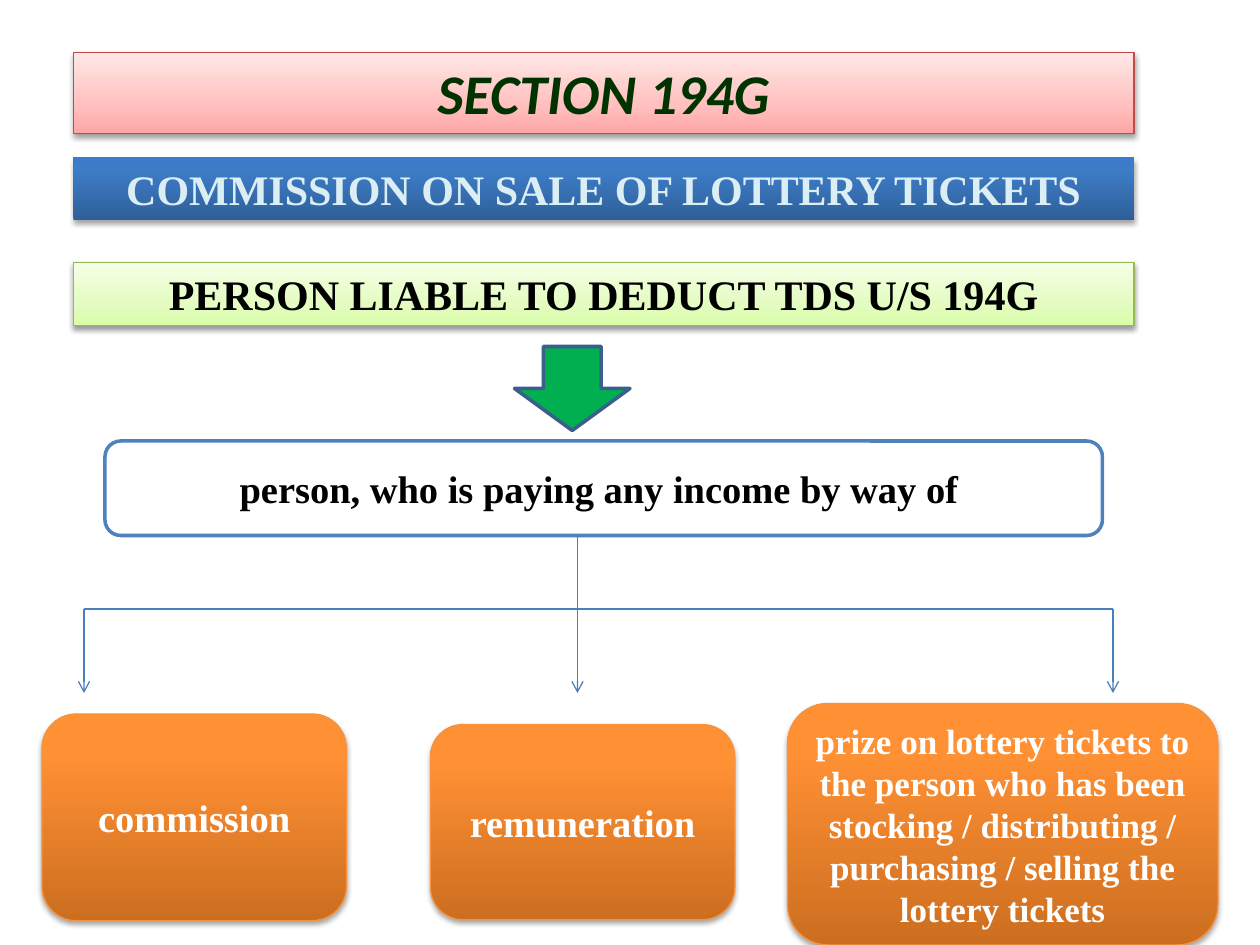
from lxml import etree
from pptx import Presentation
from pptx import util as u
from pptx.dml.color import RGBColor
from pptx.enum import shapes, text
from pptx.oxml.ns import qn

COLORS = {
    "white": "FFFFFF", "black": "000000", "dark green": "003300",
    "pale blue": "DBEEF4", "green": "00B050", "arrow edge": "3A5F8C",
    "blue": "4F81BD", "connector": "4B7EBC", "red edge": "BF4C48",
    "lime edge": "98B955", "orange edge": "F69240",
}
# Gradient stops run from bottom to top: (percent, colour)
GRADIENTS = {
    "red": [(0, "FFA6A5"), (35, "FFC0BF"), (100, "FFE7E7")],
    "blue": [(0, "2F5F99"), (80, "3D7CC7"), (100, "3A7CCB")],
    "lime": [(0, "DAFDA7"), (35, "E4FCC2"), (100, "F5FFE7")],
    "orange": [(0, "CC6E20"), (80, "FF9034"), (100, "FF9136")],
}
SOFT_SHADOW, DEEP_SHADOW = (38, 1.6), (35, 1.8)  # opacity %, distance pt
SERIF = "Times New Roman"

# All places are in grid units: the slide is 120 columns by 90 rows
COLUMNS, ROWS = 120, 90
BANNER_LEFT, BANNER_WIDTH = 7, 101
TITLE = "SECTION 194G"
BANNERS = [  # wording, top, gradient, edge, shadow, text colour
    ("COMMISSION ON SALE OF LOTTERY TICKETS", 15, "blue", None, DEEP_SHADOW, "pale blue"),
    ("PERSON LIABLE TO DEDUCT TDS U/S 194G", 25, "lime", "lime edge", SOFT_SHADOW, "black"),
]
PAYER = "person, who is paying any income by way of "
INCOMES = [  # wording, place, text size
    ("commission", (4, 68, 29, 19.7), 22),
    ("remuneration", (41, 69, 29, 18.6), 22),
    ("prize on lottery tickets to the person who has been stocking / "
     "distributing / purchasing / selling the lottery tickets", (75, 67, 41, 23), 20),
]
BRANCH_COLUMNS = (8, 55, 106)
PAYER_BOTTOM, BRANCH_ROW, BRANCH_END = 51, 58, 66

presentation = Presentation()
presentation.slide_width, presentation.slide_height = u.Inches(10), u.Inches(7.5)
slide = presentation.slides.add_slide(presentation.slide_layouts[5])


def across(columns):
    return round(presentation.slide_width * columns / COLUMNS)


def down(rows):
    return round(presentation.slide_height * rows / ROWS)


def rgb(name):
    return RGBColor.from_string(COLORS[name])


def place(shape, left, top, width, height):
    shape.left, shape.top = across(left), down(top)
    shape.width, shape.height = across(width), down(height)


def add_shape(kind, box):
    shape = slide.shapes.add_shape(kind, 0, 0, 0, 0)
    place(shape, *box)
    shape.shadow.inherit = False
    return shape


def set_edge(shape, color, width=0.75):
    if color is None:
        shape.line.fill.background()
    else:
        shape.line.color.rgb = rgb(color)
        shape.line.width = u.Pt(width)


def add_color(parent, value):
    return etree.SubElement(parent, qn("a:srgbClr"), val=value)


def set_gradient(shape, name):
    shape.fill.gradient()
    shape.fill.gradient_angle = 90
    stops = shape._element.spPr.find(qn("a:gradFill")).find(qn("a:gsLst"))
    for stop in list(stops):
        stops.remove(stop)
    for percent, value in GRADIENTS[name]:
        add_color(etree.SubElement(stops, qn("a:gs"), pos=str(percent * 1000)), value)


def set_shadow(shape, opacity, distance):
    shape.shadow.inherit = False
    effects = shape._element.spPr.find(qn("a:effectLst"))
    shadow = etree.SubElement(
        effects, qn("a:outerShdw"), blurRad=str(u.Pt(3.1)), dist=str(u.Pt(distance)),
        dir="5400000", rotWithShape="0")
    etree.SubElement(add_color(shadow, COLORS["black"]), qn("a:alpha"), val=str(opacity * 1000))


def write(shape, wording, size, color, font=SERIF, italic=False,
          anchor=text.MSO_ANCHOR.MIDDLE):
    frame = shape.text_frame
    frame.text = wording
    frame.word_wrap = True
    frame.auto_size = text.MSO_AUTO_SIZE.NONE
    frame.vertical_anchor = anchor
    paragraph = frame.paragraphs[0]
    paragraph.alignment = text.PP_ALIGN.CENTER
    style = paragraph.runs[0].font
    style.name, style.size = font, u.Pt(size)
    style.bold, style.italic = True, italic
    style.color.rgb = rgb(color)


def finish(shape, gradient, edge, shadow):
    set_gradient(shape, gradient)
    set_edge(shape, edge)
    set_shadow(shape, *shadow)


def add_line(start, end, arrow=False):
    connector = slide.shapes.add_connector(
        shapes.MSO_CONNECTOR.STRAIGHT, across(start[0]), down(start[1]),
        across(end[0]), down(end[1]))
    set_edge(connector, "connector")
    if arrow:
        etree.SubElement(connector.line._get_or_add_ln(), qn("a:tailEnd"), type="arrow")
    etree.SubElement(connector._element.spPr, qn("a:effectLst"))


title = slide.shapes.title
place(title, BANNER_LEFT, 5, BANNER_WIDTH, 7.7)
finish(title, "red", "red edge", SOFT_SHADOW)
write(title, TITLE, 32, "dark green", "Calibri", True, text.MSO_ANCHOR.TOP)

for wording, top, gradient, edge, shadow, color in BANNERS:
    banner = add_shape(shapes.MSO_SHAPE.RECTANGLE, (BANNER_LEFT, top, BANNER_WIDTH, 6))
    finish(banner, gradient, edge, shadow)
    write(banner, wording, 24, color, anchor=text.MSO_ANCHOR.TOP)

down_arrow = add_shape(shapes.MSO_SHAPE.DOWN_ARROW, (49, 33, 11, 8))
payer = add_shape(shapes.MSO_SHAPE.ROUNDED_RECTANGLE, (10, 42, 95, 9))
for shape, color, edge in ((down_arrow, "green", "arrow edge"), (payer, "white", "blue")):
    shape.fill.solid()
    shape.fill.fore_color.rgb = rgb(color)
    set_edge(shape, edge, 2)
write(payer, PAYER, 22, "black")

add_line((BRANCH_COLUMNS[1], PAYER_BOTTOM), (BRANCH_COLUMNS[1], BRANCH_ROW))
add_line((BRANCH_COLUMNS[0], BRANCH_ROW), (BRANCH_COLUMNS[-1], BRANCH_ROW))
for column in BRANCH_COLUMNS:
    add_line((column, BRANCH_ROW), (column, BRANCH_END), arrow=True)

for wording, box, size in INCOMES:
    income = add_shape(shapes.MSO_SHAPE.ROUNDED_RECTANGLE, box)
    finish(income, "orange", "orange edge", DEEP_SHADOW)
    write(income, wording, size, "white")

presentation.save("out.pptx")
